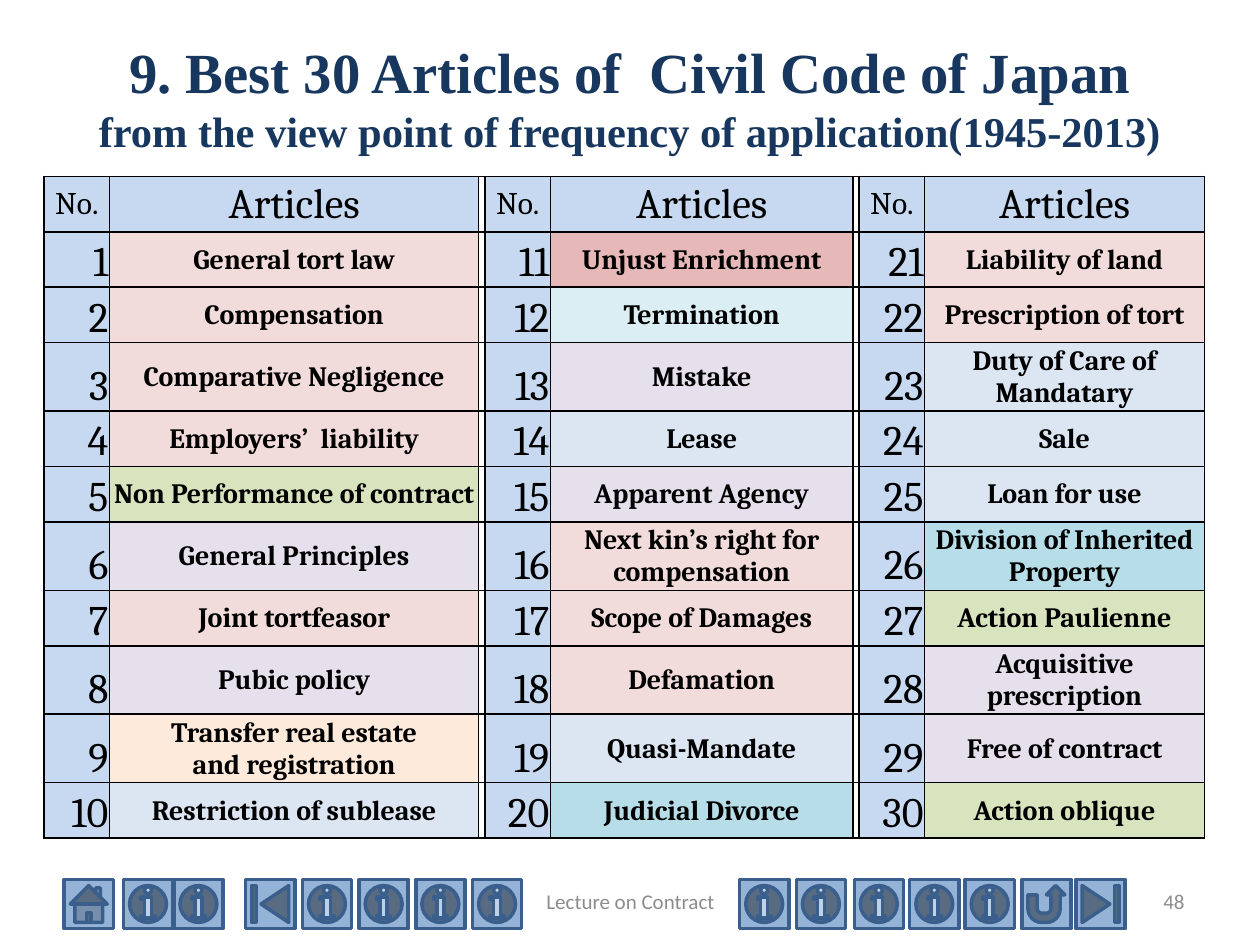
"""Build the slide listing the thirty most applied articles of the Civil Code."""
from pptx import Presentation, util as u
from pptx.dml.color import RGBColor
from pptx.enum import shapes, text
from pptx.oxml import parse_xml

In = u.Inches
Kind = shapes.MSO_SHAPE
Al, Anc = text.PP_ALIGN, text.MSO_ANCHOR


def rgb(code):
    return RGBColor.from_string(code)


def put(par, words, size=16, font="Cambria", color="000000", bold=False, align=Al.CENTER):
    par.alignment = align
    for i, line in enumerate(words.split("\n")):
        if i:
            par.add_line_break()
        if line:
            run = par.add_run()
            run.text = line
            run.font.size, run.font.name, run.font.bold = u.Pt(size), font, bold
            run.font.color.rgb = rgb(color)


deck = Presentation()
deck.slide_width, deck.slide_height = In(10), In(7.5)
slide = deck.slides.add_slide(deck.slide_layouts[6])

# left edge and preset of each navigation button
info = [0.98, 1.38, 2.4, 2.85, 3.3, 3.75, 5.87, 6.32, 6.78, 7.22, 7.66]
marks = [(0.51, Kind.ACTION_BUTTON_HOME), (1.95, Kind.ACTION_BUTTON_BEGINNING)]
marks += [(left, Kind.ACTION_BUTTON_INFORMATION) for left in info]
marks += [(8.11, Kind.ACTION_BUTTON_RETURN), (8.54, Kind.ACTION_BUTTON_END)]
for left, kind in marks:
    mark = slide.shapes.add_shape(kind, In(left), In(6.98), In(0.39), In(0.39))
    mark.shadow.inherit = False
    mark.fill.solid()
    mark.fill.fore_color.rgb = rgb("95B3D7")
    mark.line.color.rgb = rgb("3A5F8C")
    mark.line.width = u.Pt(2)

title = [
    ("9. Best 30 Articles of  Civil Code of Japan\n", dict(size=32.4)),
    ("from the view point of frequency of application(1945-2013)", dict(size=24.3)),
]
head = dict(font="Times New Roman", color="17375E", bold=True)
foot = dict(size=12, font="Calibri", color="8C8C8C")
boxes = [
    (0.5, 0.3, 9, 0.93, title, head),
    (7.17, 6.95, 2.33, 0.4, [("48", dict(align=Al.RIGHT))], foot),
    (3.42, 6.95, 3.17, 0.4, [("Lecture on Contract", {})], foot),
]
for left, top, wide, high, parts, base in boxes:
    box = slide.shapes.add_textbox(In(left), In(top), In(wide), In(high))
    frame = box.text_frame
    frame.word_wrap = True
    frame.vertical_anchor = Anc.MIDDLE
    for words, extra in parts:
        put(frame.paragraphs[0], words, **base, **extra)

blue, rose, mauve, pale = "C6D9F1", "F2DCDB", "E6E0EC", "DCE6F2"
green, teal = "D7E4BD", "B7DEE8"
items = [
    ("General tort law", rose),
    ("Compensation", rose),
    ("Comparative Negligence", rose),
    ("Employers’  liability", rose),
    ("Non Performance of contract", green),
    ("General Principles", mauve),
    ("Joint tortfeasor", rose),
    ("Pubic policy", mauve),
    ("Transfer real estate\nand registration", "FDEADA"),
    ("Restriction of sublease", pale),
    ("Unjust Enrichment", "E6B9B8"),
    ("Termination", "DBEEF4"),
    ("Mistake", mauve),
    ("Lease", pale),
    ("Apparent Agency", mauve),
    ("Next kin’s right for compensation", rose),
    ("Scope of Damages", rose),
    ("Defamation", rose),
    ("Quasi-Mandate", pale),
    ("Judicial Divorce", teal),
    ("Liability of land", rose),
    ("Prescription of tort", rose),
    ("Duty of Care of Mandatary", pale),
    ("Sale", pale),
    ("Loan for use", pale),
    ("Division of Inherited Property", teal),
    ("Action Paulienne", green),
    ("Acquisitive prescription", mauve),
    ("Free of contract", mauve),
    ("Action oblique", green),
]
wides = [0.52, 2.93, 0.05, 0.52, 2.4, 0.05, 0.52, 2.22]
highs = [0.52 if row in (3, 6, 8, 9) else 0.44 for row in range(11)]
grid = slide.shapes.add_table(
    11, 8, In(0.35), In(1.4), In(sum(wides)), In(sum(highs))).table
grid.first_row = grid.horz_banding = False
for col, wide in zip(grid.columns, wides):
    col.width = In(wide)
for row, high in zip(grid.rows, highs):
    row.height = In(high)

space = "http://schemas.openxmlformats.org/drawingml/2006/main"
for r in range(11):
    for c in range(8):
        cell = grid.cell(r, c)
        block, part = divmod(c, 3)
        inset = 0 if part == 2 else In(0.01)
        cell.margin_left = cell.margin_right = cell.margin_top = inset
        cell.margin_bottom = 0
        cell.vertical_anchor = Anc.BOTTOM if r and part == 0 else Anc.MIDDLE
        par = cell.text_frame.paragraphs[0]
        shade = blue
        if part == 2:
            cell.fill.background()
        else:
            if r == 0:
                put(par, ("No.", "Articles")[part], size=(18, 24)[part])
            elif part == 0:
                put(par, str(block * 10 + r), size=24, align=Al.RIGHT)
            else:
                words, shade = items[block * 10 + r - 1]
                put(par, words, bold=True)
            cell.fill.solid()
            cell.fill.fore_color.rgb = rgb(shade)
        props = cell._tc.get_or_add_tcPr()
        for i, side in enumerate("LRTB"):
            props.insert(i, parse_xml(
                f'<a:ln{side} xmlns:a="{space}" w="12700"><a:solidFill>'
                f'<a:srgbClr val="000000"/></a:solidFill></a:ln{side}>'))

deck.save("out.pptx")
